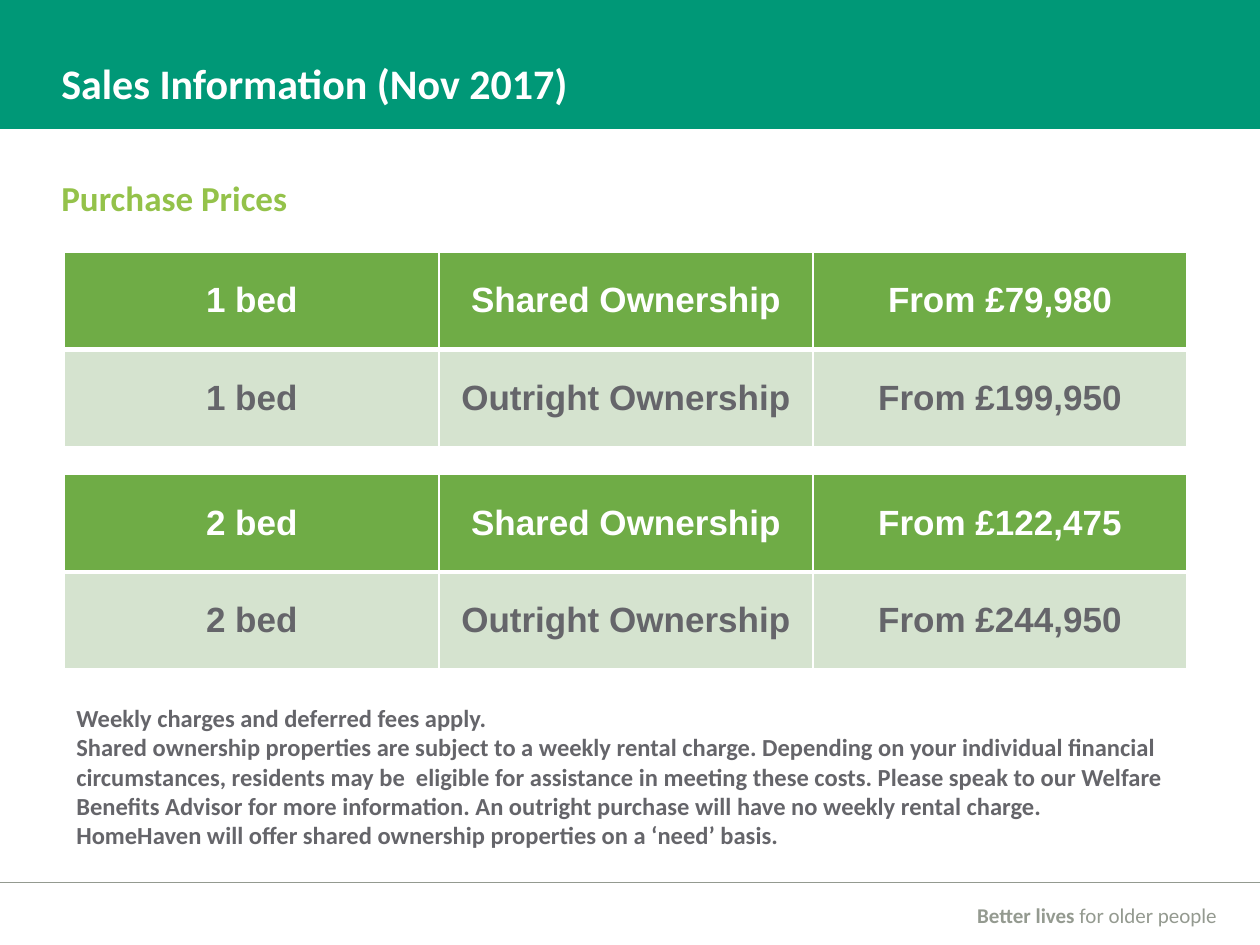
"""Builds the sales information slide with two purchase price tables."""
from lxml import etree
from pptx import Presentation
from pptx.dml.color import RGBColor
from pptx.enum import shapes, text
from pptx.oxml import ns
from pptx.util import Pt

COLORS = {"teal": "009877", "lime": "94C24A", "green": "6FAC46", "pale": "D5E3CF",
          "slate": "65656A", "gray": "949A90", "white": "FFFFFF"}
TITLE = "Sales Information (Nov 2017)"
SUBTITLE = "Purchase Prices"
PRICES = [
    [("1 bed", "Shared Ownership", "From £79,980"),
     ("1 bed", "Outright Ownership", "From £199,950")],
    [("2 bed", "Shared Ownership", "From £122,475"),
     ("2 bed", "Outright Ownership", "From £244,950")],
]
NOTES = [
    "Weekly charges and deferred fees apply.",
    "Shared ownership properties are subject to a weekly rental charge. Depending on your individual financial",
    "circumstances, residents may be  eligible for assistance in meeting these costs. Please speak to our Welfare",
    "Benefits Advisor for more information. An outright purchase will have no weekly rental charge.",
    "HomeHaven will offer shared ownership properties on a ‘need’ basis.",
]
TAGLINE = [("Better lives", True), (" for older people", False)]
ROW_STYLES = [("green", "white", 3), ("pale", "slate", 1)]

WIDTH, HEIGHT = 720, 540
TABLE_LEFT, TABLE_TOP, TABLE_STEP = 37, 144, 127.2
COLUMN_WIDTH, ROW_HEIGHT = 213.8, 55.6
MIDDLE, CENTER = text.MSO_ANCHOR.MIDDLE, text.PP_ALIGN.CENTER


def rgb(name):
    return RGBColor.from_string(COLORS[name])


def style(font, color, size, bold=True, name="Calibri"):
    font.color.rgb = rgb(color)
    for key, value in {"size": Pt(size), "bold": bold, "name": name}.items():
        setattr(font, key, value)


def add_text(slide, box, lines, color, size, frame_format=None, paragraph_format=None):
    frame = slide.shapes.add_textbox(*map(Pt, box)).text_frame
    for key, value in {"word_wrap": True, **(frame_format or {})}.items():
        setattr(frame, key, value)
    for index, runs in enumerate(lines):
        paragraph = frame.add_paragraph() if index else frame.paragraphs[0]
        for key, value in (paragraph_format or {}).items():
            setattr(paragraph, key, value)
        for words, bold in runs:
            run = paragraph.add_run()
            run.text = words
            style(run.font, color, size, bold)


def set_borders(cell, widths):
    properties = cell._tc.get_or_add_tcPr()
    for index, (side, width) in enumerate(widths.items()):
        border = etree.Element(ns.qn(f"a:ln{side}"), w=str(int(Pt(width))))
        fill = etree.SubElement(border, ns.qn("a:solidFill"))
        etree.SubElement(fill, ns.qn("a:srgbClr"), val=COLORS["white"])
        properties.insert(index, border)


def add_prices(slide, top, rows):
    columns = len(rows[0])
    table = slide.shapes.add_table(
        len(rows), columns, Pt(TABLE_LEFT), Pt(top),
        Pt(COLUMN_WIDTH * columns), Pt(ROW_HEIGHT * len(rows))).table
    for column in table.columns:
        column.width = Pt(COLUMN_WIDTH)
    for r, (values, (fill, color, bottom)) in enumerate(zip(rows, ROW_STYLES)):
        table.rows[r].height = Pt(ROW_HEIGHT)
        top_width = ROW_STYLES[r - 1][2] if r else 1
        for c, value in enumerate(values):
            cell = table.cell(r, c)
            cell.text = value
            cell.vertical_anchor = MIDDLE
            cell.fill.solid()
            cell.fill.fore_color.rgb = rgb(fill)
            paragraph = cell.text_frame.paragraphs[0]
            paragraph.alignment = CENTER
            style(paragraph.runs[0].font, color, 20, name="Arial")
            set_borders(cell, {"L": 1, "R": 1, "T": top_width, "B": bottom})


def main():
    deck = Presentation()
    deck.slide_width, deck.slide_height = Pt(WIDTH), Pt(HEIGHT)
    slide = deck.slides.add_slide(deck.slide_layouts[6])

    add_text(slide, (534, 512, 168.5, 21.6), [TAGLINE], "gray", 12,
             paragraph_format={"alignment": text.PP_ALIGN.RIGHT})
    rule = slide.shapes.add_connector(
        shapes.MSO_CONNECTOR.STRAIGHT, Pt(0), Pt(504), Pt(WIDTH), Pt(504))
    rule.line.color.rgb = rgb("gray")
    rule.line.width = Pt(0.25)
    etree.SubElement(rule._element.spPr, ns.qn("a:effectLst"))

    banner = slide.shapes.add_shape(
        shapes.MSO_SHAPE.RECTANGLE, Pt(0), Pt(0), Pt(WIDTH), Pt(73.5))
    banner.shadow.inherit = False
    banner.fill.solid()
    banner.fill.fore_color.rgb = banner.line.color.rgb = rgb("teal")
    banner.line.width = Pt(1)

    headings = [(TITLE, 32.4, 33, "white", 24), (SUBTITLE, 100.8, 27.4, "lime", 20)]
    for words, top, height, color, size in headings:
        add_text(slide, (28, top, 349, height), [[(words, True)]], color, size,
                 {"vertical_anchor": MIDDLE}, {"line_spacing": 0.9})

    for index, rows in enumerate(PRICES):
        add_prices(slide, TABLE_TOP + index * TABLE_STEP, rows)

    add_text(slide, (36.5, 398, 641.5, 106), [[(line, True)] for line in NOTES], "slate", 14)
    deck.save("out.pptx")


if __name__ == "__main__":
    main()
